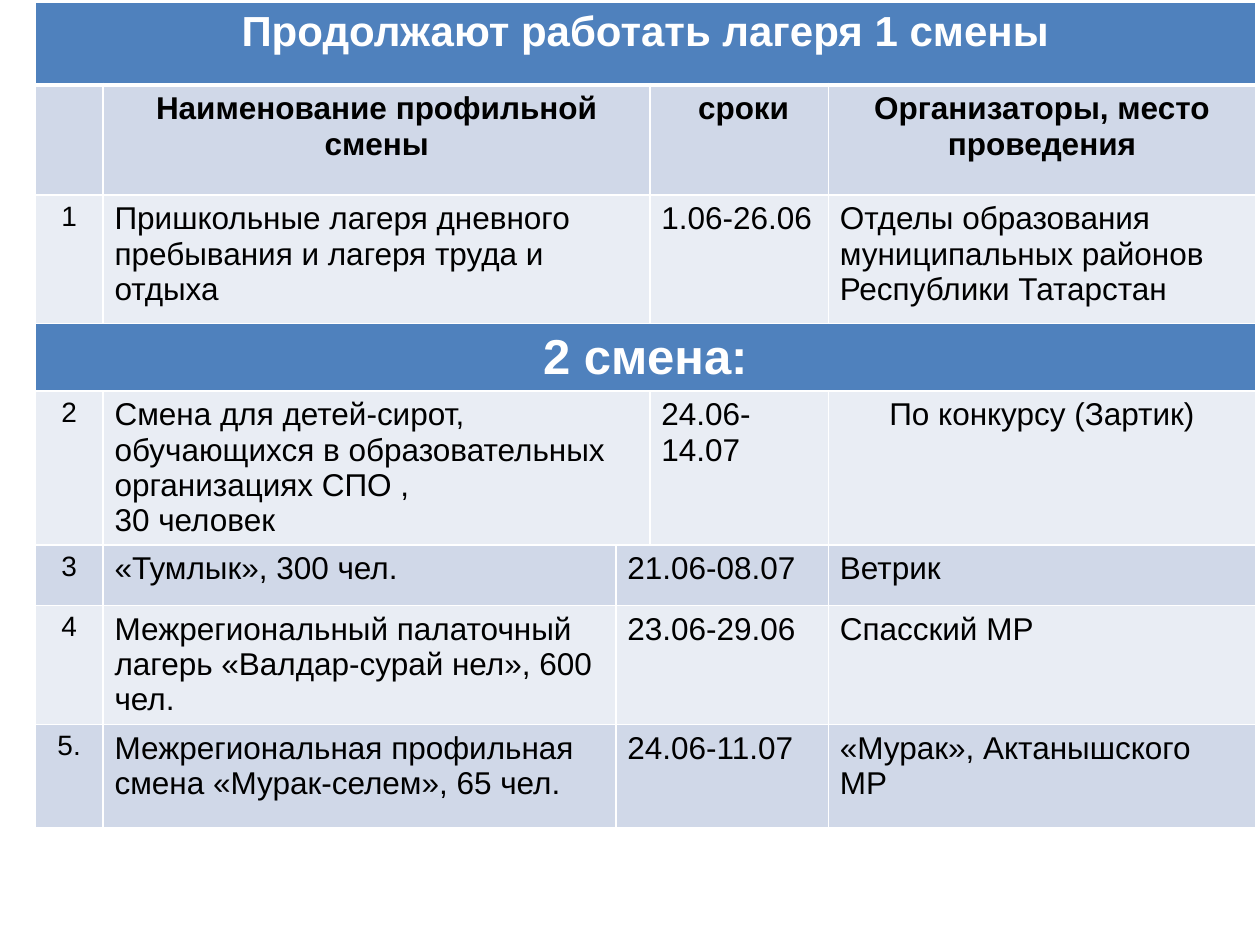
from lxml.etree import SubElement
from pptx import Presentation
from pptx.dml.color import RGBColor
from pptx.enum.text import PP_ALIGN
from pptx.oxml.ns import qn
from pptx.util import Pt

WHITE = RGBColor(0xFF, 0xFF, 0xFF)
BLACK = RGBColor(0, 0, 0)
BLUE = RGBColor(0x4F, 0x81, 0xBD)
BAND = RGBColor(0xD0, 0xD8, 0xE8)
LIGHT = RGBColor(0xE9, 0xED, 0xF4)

FONT = "Arial"
COL_WIDTHS = [39, 293, 19.5, 102, 244]
NAME_WIDE = (1, 2)
DATES_WIDE = (2, 3)
FULL_WIDTH = (0, 4)

# Height, fill, merged columns, {column: text}
ROWS = [
    (47, BLUE, FULL_WIDTH, {0: "Продолжают работать лагеря 1 смены"}),
    (63, BAND, NAME_WIDE, {1: "Наименование профильной смены", 3: " сроки",
                           4: "Организаторы, место проведения"}),
    (73.5, LIGHT, NAME_WIDE, {
        0: "1", 1: "Пришкольные лагеря дневного пребывания и лагеря труда и отдыха",
        3: "1.06-26.06",
        4: "Отделы образования муниципальных районов Республики Татарстан"}),
    (38.5, BLUE, FULL_WIDTH, {0: "2 смена:"}),
    (88, LIGHT, NAME_WIDE, {
        0: "2",
        1: "Смена для детей-сирот, обучающихся в образовательных организациях СПО ,\n"
           "30 человек",
        3: "24.06-14.07", 4: "По конкурсу (Зартик)"}),
    (34.5, BAND, DATES_WIDE, {0: "3", 1: "«Тумлык», 300 чел.",
                              2: "21.06-08.07", 4: "Ветрик"}),
    (68, LIGHT, DATES_WIDE, {
        0: "4", 1: "Межрегиональный палаточный лагерь «Валдар-сурай нел», 600 чел.",
        2: "23.06-29.06", 4: "Спасский МР"}),
    (59, BAND, DATES_WIDE, {
        0: "5.", 1: "Межрегиональная профильная смена «Мурак-селем», 65 чел.",
        2: "24.06-11.07", 4: "«Мурак», Актанышского МР"}),
]
TITLE_SIZES = {0: 24, 3: 28}
HEADER_ROW = 1
CENTERED = {(4, 4)}


def set_borders(cell, widths):
    tc_pr = cell._tc.get_or_add_tcPr()
    for side, width in zip("LRTB", widths):
        ln = SubElement(tc_pr, qn(f"a:ln{side}"), w=str(Pt(width)))
        fill = SubElement(ln, qn("a:solidFill"))
        SubElement(fill, qn("a:srgbClr"), val=str(WHITE))


def write_cell(cell, text, size, bold, color, align):
    tf = cell.text_frame
    for i, line in enumerate(text.split("\n")):
        p = tf.add_paragraph() if i else tf.paragraphs[0]
        p.alignment = align
        r = p.add_run()
        r.text = line
        r.font.name = FONT
        r.font.size = Pt(size)
        r.font.bold = bold
        r.font.color.rgb = color


def add_camp_table(s, left, top):
    width, height = sum(COL_WIDTHS), sum(row[0] for row in ROWS)
    table = s.shapes.add_table(len(ROWS), len(COL_WIDTHS), Pt(left), Pt(top),
                               Pt(width), Pt(height)).table
    for column, col_width in zip(table.columns, COL_WIDTHS):
        column.width = Pt(col_width)
    for i, (row_height, fill, (first, last), texts) in enumerate(ROWS):
        table.rows[i].height = Pt(row_height)
        table.cell(i, first).merge(table.cell(i, last))
        title = i in TITLE_SIZES
        for j in range(len(COL_WIDTHS)):
            cell = table.cell(i, j)
            cell.margin_left = cell.margin_right = Pt(6.5)
            cell.margin_top = cell.margin_bottom = Pt(3.6)
            set_borders(cell, (1, 1, 3 if i == 1 else 1, 3 if i == 0 else 1))
            cell.fill.solid()
            cell.fill.fore_color.rgb = fill
            if j in texts:
                size = TITLE_SIZES.get(i, 16 if j == 0 else 18)
                centered = j == 0 or i == HEADER_ROW or (i, j) in CENTERED
                write_cell(cell, texts[j], size, title or i == HEADER_ROW,
                           WHITE if title else BLACK,
                           PP_ALIGN.CENTER if centered else PP_ALIGN.LEFT)


def main():
    prs = Presentation()
    prs.slide_width, prs.slide_height = Pt(720), Pt(540)
    s = prs.slides.add_slide(prs.slide_layouts[6])
    add_camp_table(s, 20, 1.5)
    prs.save("out.pptx")


if __name__ == "__main__":
    main()
